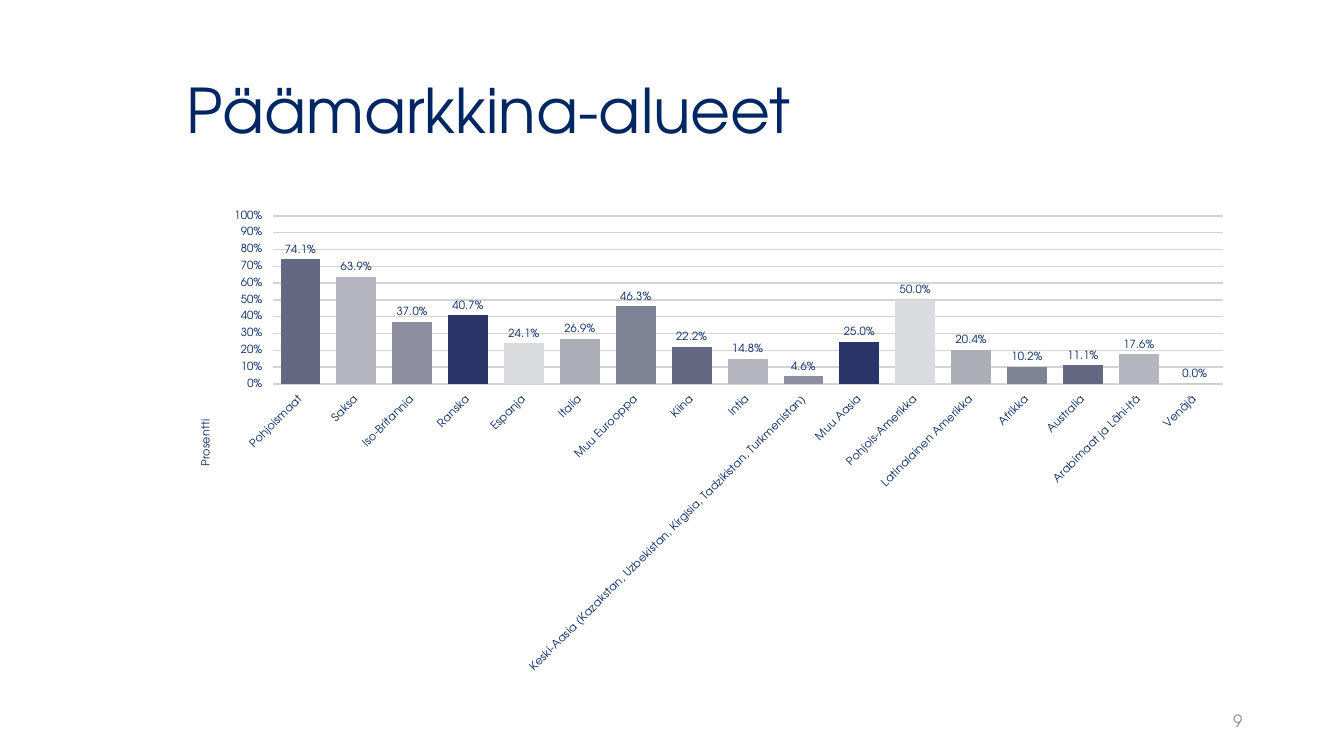
from itertools import cycle

from lxml import etree
from pptx import Presentation
from pptx.chart.data import CategoryChartData
from pptx.dml.color import RGBColor
from pptx.enum import chart as chart_enum, text as text_enum
from pptx.oxml import ns
from pptx.util import Inches, Pt


class Theme:
    font = "TeX Gyre Adventor"
    navy = RGBColor.from_string("002663")
    grey = RGBColor.from_string("8C8E9F")
    grid = RGBColor.from_string("D3D3D3")
    bars = ["646883", "B4B5BF", "8C8E9F", "293568", "DADBDF", "ABADB7", "7F8195"]
    title_size, number_size, chart_size, label_size = Pt(44), Pt(12), Pt(18), Pt(8)


MARKETS = {
    "Pohjoismaat": 0.741,
    "Saksa": 0.639,
    "Iso-Britannia": 0.37,
    "Ranska": 0.407,
    "Espanja": 0.241,
    "Italia": 0.269,
    "Muu Eurooppa": 0.463,
    "Kiina": 0.222,
    "Intia": 0.148,
    "Keski-Aasia (Kazakstan, Uzbekistan, Kirgisia, Tadzikistan, Turkmenistan)": 0.046,
    "Muu Aasia": 0.25,
    "Pohjois-Amerikka": 0.5,
    "Latinalainen Amerikka": 0.204,
    "Afrikka": 0.102,
    "Australia": 0.111,
    "Arabimaat ja Lähi-Itä": 0.176,
    "Venäjä": 0,
}


def apply(target, values):
    for name, value in values.items():
        setattr(target, name, value)


def format_font(font, size, color=Theme.navy):
    apply(font, {"name": Theme.font, "size": size, "bold": False})
    font.color.rgb = color


def place(shape, box):
    apply(shape, dict(zip(("left", "top", "width", "height"), map(Inches, box))))


def set_layout(parent, after, **fractions):
    """Fix a chart part at fractions of the chart's size."""
    for old in parent.findall(ns.qn("c:layout")):
        parent.remove(old)
    layout = etree.Element(ns.qn("c:layout"))
    manual = etree.SubElement(layout, ns.qn("c:manualLayout"))
    if "w" in fractions:
        etree.SubElement(manual, ns.qn("c:layoutTarget"), val="inner")
    for mode in ("xMode", "yMode"):
        etree.SubElement(manual, ns.qn("c:" + mode), val="edge")
    for name, value in fractions.items():
        etree.SubElement(manual, ns.qn("c:" + name), val=str(value))
    if after is None:
        parent.insert(0, layout)
    else:
        after.addnext(layout)


def add_title(slide, box):
    title = slide.shapes.title
    place(title, box)
    frame = title.text_frame
    frame.text = "Päämarkkina-alueet"
    apply(frame, {"vertical_anchor": text_enum.MSO_ANCHOR.MIDDLE, "word_wrap": True})
    paragraph = frame.paragraphs[0]
    apply(paragraph, {"alignment": text_enum.PP_ALIGN.LEFT, "line_spacing": 0.9})
    format_font(paragraph.font, Theme.title_size)


def add_page_number(slide, box):
    frame = slide.shapes.add_textbox(*map(Inches, box)).text_frame
    apply(frame, {"vertical_anchor": text_enum.MSO_ANCHOR.MIDDLE, "word_wrap": True})
    paragraph = frame.paragraphs[0]
    paragraph.text = "9"
    apply(paragraph, {"alignment": text_enum.PP_ALIGN.RIGHT, "space_after": Pt(6)})
    format_font(paragraph.font, Theme.number_size, Theme.grey)


def format_axes(chart):
    for axis in (chart.category_axis, chart.value_axis):
        axis.major_tick_mark = chart_enum.XL_TICK_MARK.OUTSIDE
        axis.format.line.fill.background()
        format_font(axis.tick_labels.font, Theme.label_size)

    # Slanted market names
    category_text = chart.category_axis.tick_labels.font._element.getparent().getparent().getparent()
    category_text.find(ns.qn("a:bodyPr")).set("rot", "-2700000")

    # Percentage scale
    value_axis = chart.value_axis
    apply(value_axis, {"minimum_scale": 0, "maximum_scale": 1, "major_unit": 0.1,
                       "has_major_gridlines": True})
    apply(value_axis.tick_labels, {"number_format": "0%", "number_format_is_linked": False})
    grid_line = value_axis.major_gridlines.format.line
    grid_line.width = Pt(1)
    grid_line.color.rgb = Theme.grid

    # Scale title
    axis_title = value_axis.axis_title
    frame = axis_title.text_frame
    frame.text = "Prosentti"
    frame._txBody.find(ns.qn("a:bodyPr")).set("rot", "-5400000")
    format_font(frame.paragraphs[0].runs[0].font, Theme.label_size)
    element = axis_title._element
    set_layout(element, element.find(ns.qn("c:tx")), x=0.02, y=0.45)


def add_market_chart(slide, box):
    data = CategoryChartData(number_format="0.0%")
    data.categories = list(MARKETS)
    data.add_series("Series 1", list(MARKETS.values()))
    chart = slide.shapes.add_chart(
        chart_enum.XL_CHART_TYPE.COLUMN_CLUSTERED, *map(Inches, box), data).chart
    apply(chart, {"has_legend": False, "has_title": False})
    format_font(chart.font, Theme.chart_size)
    format_axes(chart)

    # Columns in a repeating palette
    plot = chart.plots[0]
    apply(plot, {"gap_width": 40, "overlap": -2, "vary_by_categories": False,
                 "has_data_labels": True})
    for index, color in zip(range(len(MARKETS)), cycle(Theme.bars)):
        fill = plot.series[0].points[index].format.fill
        fill.solid()
        fill.fore_color.rgb = RGBColor.from_string(color)

    # Values above the columns
    apply(plot.data_labels, {
        "show_value": True, "number_format": "0.0%", "number_format_is_linked": False,
        "position": chart_enum.XL_LABEL_POSITION.OUTSIDE_END})
    format_font(plot.data_labels.font, Theme.label_size)

    plot_area = chart._chartSpace.find(".//" + ns.qn("c:plotArea"))
    set_layout(plot_area, None, x=0.09, y=0.03, w=0.89, h=0.35)


def build_chart_slide(presentation):
    slide = presentation.slides.add_slide(presentation.slide_layouts[5])
    left, width = 1.75, 10.59
    add_title(slide, (left, 0.4, width, 1.45))
    add_page_number(slide, (9.42, 6.95, 3, 0.4))
    add_market_chart(slide, (left, 2, width, 4.76))


def main():
    presentation = Presentation()
    apply(presentation, {"slide_width": Inches(13.33), "slide_height": Inches(7.5)})
    build_chart_slide(presentation)
    presentation.save("out.pptx")


if __name__ == "__main__":
    main()
